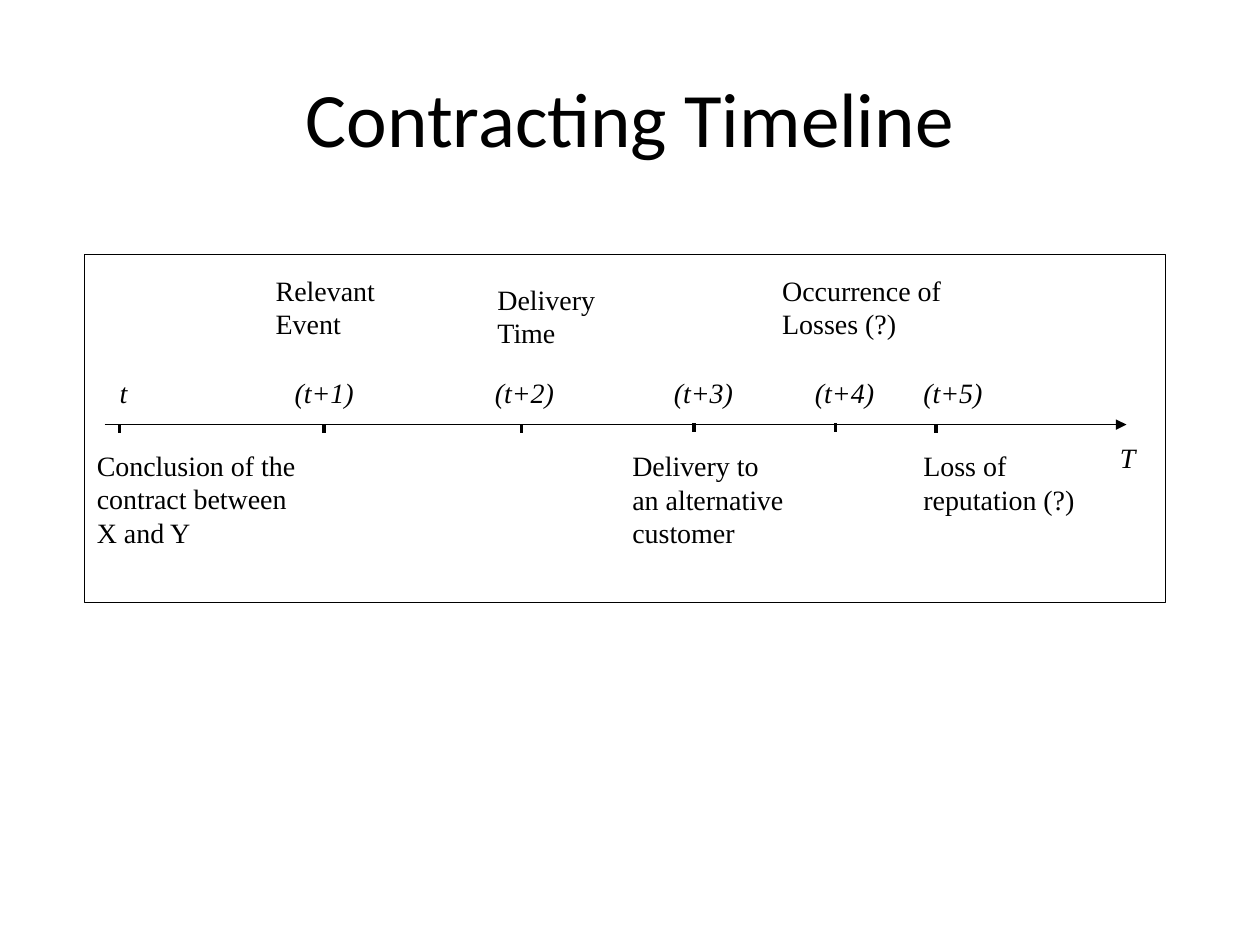
from dataclasses import dataclass

from lxml.etree import SubElement
from pptx import Presentation
from pptx.dml.color import RGBColor
from pptx.enum.shapes import MSO_CONNECTOR, MSO_SHAPE
from pptx.enum.text import MSO_ANCHOR, PP_ALIGN
from pptx.oxml.ns import qn
from pptx.util import Inches, Pt


@dataclass(frozen=True)
class Theme:
    ink: RGBColor = RGBColor(0, 0, 0)
    paper: RGBColor = RGBColor(255, 255, 255)
    title_font: str = "Calibri"
    body_font: str = "Times New Roman"
    title_size: int = 44
    body_size: int = 16
    frame_line: float = 0.5
    axis_line: float = 0.75
    tick_line: float = 2


THEME = Theme()

TITLE = "Contracting Timeline"
FRAME = (0.67, 2.02, 8.58, 2.76)
AXIS_START, AXIS_END, AXIS_Y = 0.83, 8.94, 3.37
TICK_LENGTH = 0.07
MOMENT_TOP, MOMENT_HEIGHT = 2.93, 0.45

MOMENTS = [
    ("t", 0.85, 0.42, 0.95, AXIS_Y),
    ("(t+1)", 2.24, 0.86, 2.57, AXIS_Y),
    ("(t+2)", 3.83, 0.86, 4.14, AXIS_Y),
    ("(t+3)", 5.25, 0.86, 5.51, AXIS_Y - 0.01),
    ("(t+4)", 6.37, 0.86, 6.63, AXIS_Y - 0.01),
    ("(t+5)", 7.23, 0.86, 7.43, AXIS_Y),
]
EVENTS = [
    ("Conclusion of the contract between X and Y", 0.67, 3.51, 1.78, 1.16),
    ("Relevant Event", 2.09, 2.12, 1.17, 0.82),
    ("Delivery Time", 3.85, 2.19, 1.07, 0.82),
    ("Delivery to an alternative customer", 4.92, 3.51, 1.41, 0.99),
    ("Occurrence of Losses (?)", 6.11, 2.12, 1.46, 0.82),
    ("Loss of reputation (?)", 7.23, 3.51, 1.49, 0.82),
]
AXIS_NAME = ("T", 8.79, 3.45, 0.46, 0.45)


def add_text(slide, text, left, top, width, height, italic=False,
             font=THEME.body_font, size=THEME.body_size,
             align=PP_ALIGN.LEFT, anchor=MSO_ANCHOR.TOP):
    box = slide.shapes.add_textbox(*map(Inches, (left, top, width, height)))
    frame = box.text_frame
    frame.word_wrap = True
    frame.vertical_anchor = anchor
    paragraph = frame.paragraphs[0]
    paragraph.text = text
    paragraph.alignment = align
    paragraph.font.name = font
    paragraph.font.size = Pt(size)
    paragraph.font.italic = italic
    paragraph.font.color.rgb = THEME.ink


def add_line(slide, x1, y1, x2, y2, weight, arrow=False):
    line = slide.shapes.add_connector(
        MSO_CONNECTOR.STRAIGHT, *map(Inches, (x1, y1, x2, y2)))
    line.line.color.rgb = THEME.ink
    line.line.width = Pt(weight)
    if arrow:
        SubElement(line.line._get_or_add_ln(), qn("a:tailEnd"), type="triangle")
    SubElement(line._element.spPr, qn("a:effectLst"))


def add_frame(slide):
    frame = slide.shapes.add_shape(MSO_SHAPE.RECTANGLE, *map(Inches, FRAME))
    frame.shadow.inherit = False
    frame.fill.solid()
    frame.fill.fore_color.rgb = THEME.paper
    frame.line.color.rgb = THEME.ink
    frame.line.width = Pt(THEME.frame_line)


def main():
    deck = Presentation()
    deck.slide_width, deck.slide_height = Inches(10), Inches(7.5)
    slide = deck.slides.add_slide(deck.slide_layouts[6])

    add_text(slide, TITLE, 0.5, 0.3, 9, 1.25, font=THEME.title_font,
             size=THEME.title_size, align=PP_ALIGN.CENTER,
             anchor=MSO_ANCHOR.MIDDLE)
    add_frame(slide)
    for event in EVENTS:
        add_text(slide, *event)
    add_text(slide, *AXIS_NAME, italic=True)
    add_line(slide, AXIS_START, AXIS_Y, AXIS_END, AXIS_Y,
             THEME.axis_line, arrow=True)
    for moment, left, width, tick_x, tick_top in MOMENTS:
        add_text(slide, moment, left, MOMENT_TOP, width, MOMENT_HEIGHT,
                 italic=True)
        add_line(slide, tick_x, tick_top, tick_x, tick_top + TICK_LENGTH,
                 THEME.tick_line)

    deck.save("out.pptx")


if __name__ == "__main__":
    main()
